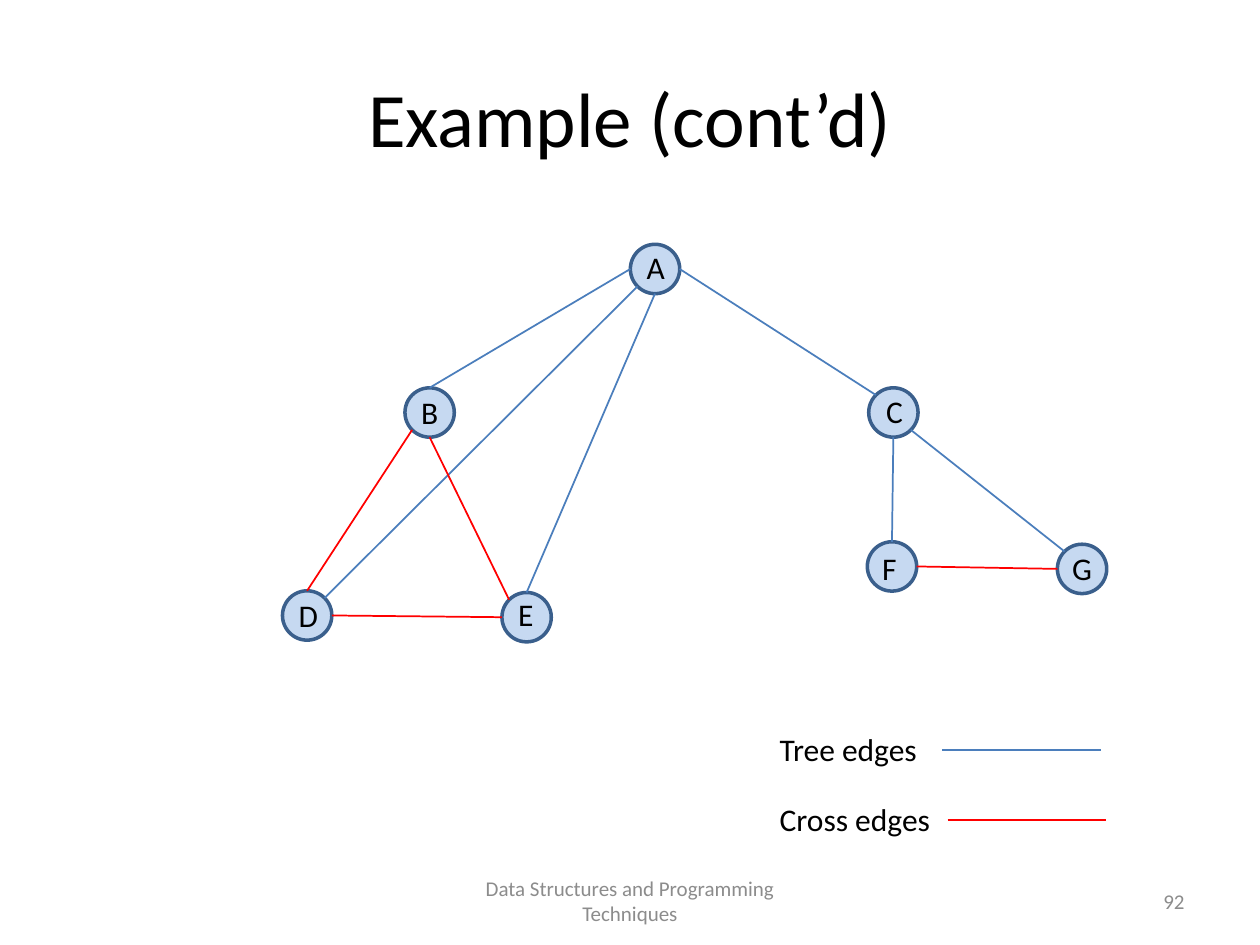
from math import cos, radians, sin

from lxml import etree
from pptx import Presentation
from pptx.dml.color import RGBColor
from pptx.enum.shapes import MSO_CONNECTOR, MSO_SHAPE
from pptx.enum.text import MSO_ANCHOR, MSO_AUTO_SIZE, PP_ALIGN
from pptx.oxml.ns import qn
from pptx.util import Pt

OVAL = MSO_SHAPE.OVAL
LINE = MSO_CONNECTOR.STRAIGHT
TOP, MID = MSO_ANCHOR.TOP, MSO_ANCHOR.MIDDLE
LEFT, CENTER, RIGHT = PP_ALIGN.LEFT, PP_ALIGN.CENTER, PP_ALIGN.RIGHT
GROW, FIXED = MSO_AUTO_SIZE.SHAPE_TO_FIT_TEXT, MSO_AUTO_SIZE.NONE

FONT = "Calibri"
COLORS = {"text": "000000", "foot": "8C8C8C", "node": "C6D9F1",
          "rim": "3A5F8C", "tree": "4B7EBC", "cross": "FF0000"}
SIZE = 28.2
NODES = {
    "A": (198.8, 0, 2.2, -1.4),
    "B": (70, 82, 2.2, -0.7),
    "C": (335, 82, 2.9, -1.4),
    "D": (0, 198, 2.2, -0.7),
    "E": (125.4, 199, 2.2, -2.2),
    "F": (334.2, 170, 1.4, 0.7),
    "G": (442.8, 171.4, 1.4, -0.7),
}
ANGLES = {"e": 0, "se": 45, "s": 90, "sw": 135, "w": 180, "nw": 225, "n": 270}
EDGES = [
    ("A", "s", "E", "n", "tree"),
    ("A", "sw", "D", "ne", "tree"),
    ("A", "w", "B", "n", "tree"),
    ("B", "s", "E", "nw", "cross"),
    ("B", "sw", "D", "n", "cross"),
    ("D", "e", "E", "w", "cross"),
    ("A", "e", "C", "nw", "tree"),
    ("C", "s", "F", "n", "tree"),
    ("C", "se", "G", "nw", "tree"),
    ("F", "e", "G", "w", "cross"),
]
ANGLES["ne"] = 315
KEYS = [("Tree edges", "tree", 100), ("Cross edges", "cross", 103)]


def paint(name):
    """Return the named colour."""
    return RGBColor.from_string(COLORS[name])


def write(slide, box, words, size, tone="text", align=LEFT, anchor=TOP, fit=FIXED):
    """Place one line of text in a box."""
    frame = slide.shapes.add_textbox(*map(Pt, box)).text_frame
    frame.word_wrap = True
    frame.auto_size = fit
    frame.vertical_anchor = anchor
    para = frame.paragraphs[0]
    para.alignment = align
    run = para.add_run()
    run.text = words
    run.font.name = FONT
    run.font.size = Pt(size)
    run.font.color.rgb = paint(tone)


def link(slide, start, end, tone):
    """Draw a thin line between two points."""
    line = slide.shapes.add_connector(LINE, *map(Pt, (*start, *end)))
    line.line.color.rgb = paint(tone)
    line.line.width = Pt(1)
    etree.SubElement(line._element.spPr, qn("a:effectLst"))


def rim(name, side, left, top):
    """Find a point on the edge of a node."""
    x, y = NODES[name][:2]
    turn, half = radians(ANGLES[side]), SIZE / 2
    return left + x + half + half * cos(turn), top + y + half + half * sin(turn)


def graph(slide, left, top):
    """Draw the nodes, edges and letters."""
    for x, y, _, _ in NODES.values():
        node = slide.shapes.add_shape(OVAL, *map(Pt, (left + x, top + y, SIZE, SIZE)))
        node.shadow.inherit = False
        node.fill.solid()
        node.fill.fore_color.rgb = paint("node")
        node.line.color.rgb = paint("rim")
        node.line.width = Pt(2)
    for tail, out, head, into, tone in EDGES:
        link(slide, rim(tail, out, left, top), rim(head, into, left, top), tone)
    for name, (x, y, dx, dy) in NODES.items():
        write(slide, (left + x + dx, top + y + dy, 24.5, 29), name, 18, fit=GROW)


def legend(slide, left, top, gap=40):
    """Draw one labelled line for each kind of edge."""
    for row, (words, tone, start) in enumerate(KEYS):
        y = top + row * gap
        link(slide, (left + start, y + 14.6), (left + start + 90.7, y + 14.6), tone)
        write(slide, (left, y, 116, 29), words, 18, fit=GROW)


def footer(slide, top, height):
    """Write the course name and the page number."""
    write(slide, (246, top, 228, height), "Data Structures and Programming Techniques",
          12, "foot", CENTER, MID)
    write(slide, (516, top, 168, height), "92", 12, "foot", RIGHT, MID)


def main():
    """Build and save the slide."""
    deck = Presentation()
    deck.slide_width, deck.slide_height = Pt(720), Pt(540)
    slide = deck.slides.add_slide(deck.slide_layouts[6])
    write(slide, (36, 21.6, 648, 90), "Example (cont’d)", 44, align=CENTER, anchor=MID)
    footer(slide, 500.5, 28.75)
    graph(slide, 161.4, 139.6)
    legend(slide, 438.5, 413.8)
    deck.save("out.pptx")


if __name__ == "__main__":
    main()
